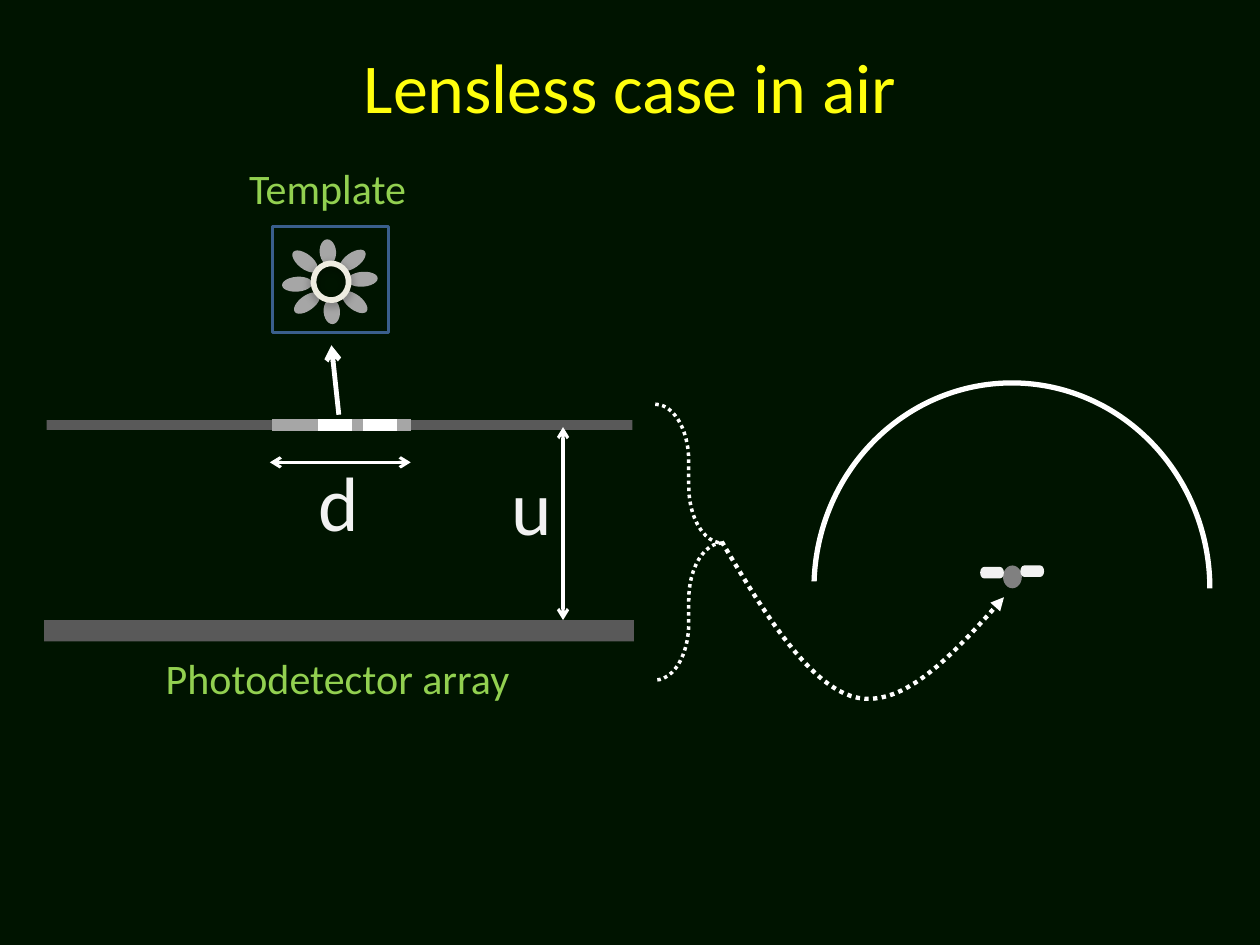
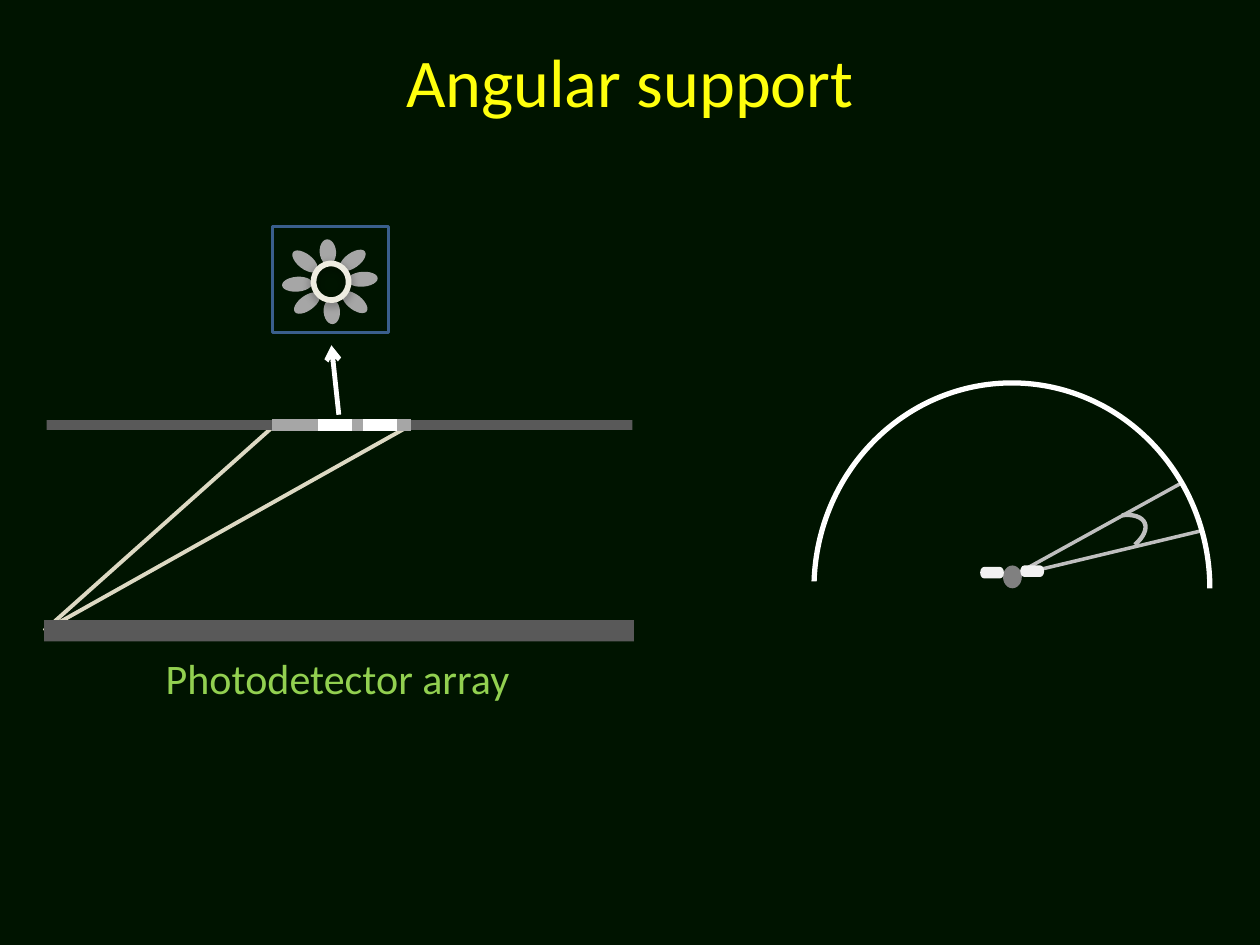
from dataclasses import dataclass
from typing import Any, NamedTuple

from lxml.etree import SubElement
from pptx import Presentation
from pptx.dml.color import RGBColor
from pptx.enum.dml import MSO_LINE
from pptx.enum.shapes import MSO_CONNECTOR, MSO_SHAPE
from pptx.enum.text import MSO_ANCHOR, MSO_AUTO_SIZE, PP_ALIGN
from pptx.oxml.ns import qn
from pptx.util import Cm, Pt

# Shared look
FONT = "Calibri"
NIGHT, YELLOW, GREEN = "001400", "FFFF0D", "92D050"
WHITE, PALE, SILVER = "FFFFFF", "F2F2F2", "BFBFBF"
PETAL_GREY, BODY_GREY, BAR_GREY = "A6A6A6", "808080", "595959"
CREAM, SAND, FRAME_BLUE = "EEECE1", "DDD9C3", "3A5F8C"
SLIDE_WIDTH, SLIDE_HEIGHT = 25.4, 19.05


# All places and sizes are in centimetres
class Point(NamedTuple):
    x: float
    y: float


class Area(NamedTuple):
    left: float
    top: float
    width: float
    height: float


@dataclass(frozen=True)
class Stroke:
    color: str
    width: float
    dash: Any = None
    head: str = ""
    tail: str = ""


@dataclass(frozen=True)
class PetalPair:
    """Two equal petals on opposite sides of the flower's heart."""
    offset: Point
    width: float
    height: float
    rotation: float


FLOWER_HEART = Point(6.65, 5.68)
PETAL_PAIRS = (
    PetalPair(Point(0.04, 0.6), 0.33, 0.51, 355.7),
    PetalPair(Point(0.66, -0.05), 0.61, 0.3, 355.7),
    PetalPair(Point(0.46, -0.43), 0.61, 0.3, 324.1),
    PetalPair(Point(0.5, 0.41), 0.61, 0.3, 218.2),
)
DETECTOR = Area(0.89, 12.5, 11.89, 0.43)
FILM_LEFT = Area(0.94, 8.47, 4.55, 0.2)
FILM_RIGHT = Area(8.28, 8.47, 4.47, 0.2)
DETECTOR_END = Point(0.89, 12.72)
BEE = Point(20.42, 11.61)
DIMENSION = Stroke(WHITE, 1.75, head="arrow", tail="arrow")


# Drawing helpers
def rgb(color: str) -> RGBColor:
    return RGBColor.from_string(color)


def apply_stroke(item: Any, stroke: Stroke) -> None:
    item.line.color.rgb = rgb(stroke.color)
    item.line.width = Pt(stroke.width)
    if stroke.dash is not None:
        item.line.dash_style = stroke.dash
    outline = item._element.spPr.find(qn("a:ln"))
    for tag, kind in (("a:headEnd", stroke.head), ("a:tailEnd", stroke.tail)):
        if kind:
            SubElement(outline, qn(tag), type=kind)


def finish_shape(shape: Any, fill: str = "", stroke: Stroke | None = None) -> None:
    shape.shadow.inherit = False
    if fill:
        shape.fill.solid()
        shape.fill.fore_color.rgb = rgb(fill)
    else:
        shape.fill.background()
    if stroke:
        apply_stroke(shape, stroke)
    else:
        shape.line.fill.background()


def draw_shape(shapes: Any, kind: Any, area: Area, fill: str = "",
               stroke: Stroke | None = None, rotation: float = 0,
               adjustments: tuple[float, ...] = ()) -> Any:
    shape = shapes.add_shape(kind, *(Cm(length) for length in area))
    shape.rotation = rotation
    for index, value in enumerate(adjustments):
        shape.adjustments[index] = value
    finish_shape(shape, fill, stroke)
    return shape


def draw_line(shapes: Any, start: Point, end: Point, stroke: Stroke) -> Any:
    line = shapes.add_connector(MSO_CONNECTOR.STRAIGHT,
                                *(Cm(length) for length in (*start, *end)))
    apply_stroke(line, stroke)
    SubElement(line._element.spPr, qn("a:effectLst"))
    return line


def draw_curve(shapes: Any, points: list[Point], stroke: Stroke, steps: int = 20) -> None:
    """Draw joined cubic curves; neighbours share an end point."""
    vertices = []
    for first in range(0, len(points) - 1, 3):
        controls = points[first:first + 4]
        for step in range(1, steps + 1):
            t = step / steps
            weights = ((1 - t) ** 3, 3 * t * (1 - t) ** 2, 3 * t ** 2 * (1 - t), t ** 3)
            x, y = (sum(w * c for w, c in zip(weights, axis)) for axis in zip(*controls))
            vertices.append((Cm(x), Cm(y)))
    builder = shapes.build_freeform(Cm(points[0].x), Cm(points[0].y))
    builder.add_line_segments(vertices, close=False)
    finish_shape(builder.convert_to_shape(), stroke=stroke)


def add_shadow(shape: Any) -> None:
    effects = shape._element.spPr.find(qn("a:effectLst"))
    shadow = SubElement(effects, qn("a:outerShdw"), blurRad=str(Pt(5)),
                        dist=str(Pt(1.8)), dir="5400000", rotWithShape="0")
    color = SubElement(shadow, qn("a:srgbClr"), val="000000")
    SubElement(color, qn("a:alpha"), val="35000")


def write_text(frame: Any, text: str, *, size: float, color: str,
               align: Any = PP_ALIGN.CENTER, anchor: Any = MSO_ANCHOR.TOP,
               wrap: bool = True) -> None:
    frame.word_wrap = wrap
    frame.auto_size = MSO_AUTO_SIZE.NONE
    frame.vertical_anchor = anchor
    para = frame.paragraphs[0]
    para.alignment = align
    span = para.add_run()
    span.text = text
    span.font.name = FONT
    span.font.size = Pt(size)
    span.font.color.rgb = rgb(color)


def add_label(page: Any, text: str, area: Area, **style: Any) -> None:
    box = page.shapes.add_textbox(*(Cm(length) for length in area))
    write_text(box.text_frame, text, **style)


def add_page(deck: Any, title: str, top: float, **style: Any) -> Any:
    page = deck.slides.add_slide(deck.slide_layouts[5])
    box = page.shapes.title
    box.left, box.top = Cm(0), Cm(top)
    box.width, box.height = Cm(SLIDE_WIDTH), Cm(3.18)
    write_text(box.text_frame, title, color=YELLOW, **style)
    return page


# Parts that both slides show
def draw_sensor(page: Any) -> tuple[Any, Any]:
    """Draw detector, film and aperture; return the detector and right film."""
    detector, left, right = (
        draw_shape(page.shapes, MSO_SHAPE.RECTANGLE, area, BAR_GREY)
        for area in (DETECTOR, FILM_LEFT, FILM_RIGHT))
    for stroke in (Stroke(WHITE, 6.5), Stroke(PETAL_GREY, 6.5, MSO_LINE.DASH_DOT)):
        aperture = draw_line(page.shapes, Point(5.49, 8.57), Point(8.28, 8.57), stroke)
        aperture.begin_connect(left, 3)
        aperture.end_connect(right, 1)
    add_label(page, "Photodetector array", Area(2.59, 13.03, 8.43, 1.27),
              size=24, color=GREEN)
    return detector, right


def draw_template(page: Any) -> None:
    draw_line(page.shapes, Point(6.83, 8.36), Point(6.68, 6.96),
              Stroke(WHITE, 2.75, tail="arrow"))
    flower = page.shapes.add_group_shape().shapes
    for pair in PETAL_PAIRS:
        for side in (1, -1):
            area = Area(FLOWER_HEART.x + side * pair.offset.x - pair.width / 2,
                        FLOWER_HEART.y + side * pair.offset.y - pair.height / 2,
                        pair.width, pair.height)
            draw_shape(flower, MSO_SHAPE.OVAL, area, PETAL_GREY, rotation=pair.rotation)
    ring = draw_shape(flower, MSO_SHAPE.OVAL, Area(6.32, 5.31, 0.71, 0.74),
                      stroke=Stroke(CREAM, 3.25), rotation=355.7)
    add_shadow(ring)
    draw_shape(flower, MSO_SHAPE.RECTANGLE, Area(5.49, 4.57, 2.34, 2.13),
               stroke=Stroke(FRAME_BLUE, 2))


def draw_dome(page: Any) -> None:
    draw_shape(page.shapes, MSO_SHAPE.ARC, Area(16.41, 7.72, 7.98, 8.28),
               stroke=Stroke(WHITE, 3), adjustments=(109.195, 0))
    bee = page.shapes.add_group_shape().shapes
    draw_shape(bee, MSO_SHAPE.FLOWCHART_CONNECTOR, Area(20.22, 11.4, 0.38, 0.46), BODY_GREY)
    for left, top in ((19.76, 11.43), (20.57, 11.4)):
        draw_shape(bee, MSO_SHAPE.FLOWCHART_TERMINATOR, Area(left, top, 0.48, 0.23), PALE)


# Slides
def build_lensless_case(deck: Any) -> None:
    page = add_page(deck, "Lensless case in air", 0.74, size=40)
    draw_sensor(page)

    # Dimensions of the aperture and the gap
    draw_line(page.shapes, Point(5.44, 9.32), Point(8.28, 9.32), DIMENSION)
    draw_line(page.shapes, Point(11.35, 8.61), Point(11.35, 12.5), DIMENSION)
    for letter, left, top in (("d", 6.17, 9.04), ("u", 10.06, 9.12)):
        add_label(page, letter, Area(left, top, 1.35, 2.13), size=44, color=PALE,
                  align=PP_ALIGN.LEFT, wrap=False)

    # Brace and curve that lead to the small sensor under the dome
    draw_shape(page.shapes, MSO_SHAPE.RIGHT_BRACE, Area(13.21, 8.15, 1.35, 5.56),
               stroke=Stroke(WHITE, 2, MSO_LINE.ROUND_DOT), adjustments=(0.853, 0.503))
    draw_curve(page.shapes,
               [Point(14.55, 10.92), Point(15.44, 12.42), Point(16.36, 13.89),
                Point(17.3, 14.07), Point(18.26, 14.25), Point(19.25, 13.16),
                Point(20.24, 12.04)],
               Stroke(WHITE, 2.5, MSO_LINE.ROUND_DOT, tail="triangle"))
    draw_dome(page)
    add_label(page, "Template", Area(4.75, 3.15, 3.71, 1.27), size=24, color=GREEN,
              wrap=False)
    draw_template(page)


def build_angular_support(deck: Any) -> None:
    page = add_page(deck, "Angular support", 0.03, size=39, anchor=MSO_ANCHOR.MIDDLE)
    draw_template(page)

    # Rays from the aperture's edges to the detector's end, behind the bars
    rays = [draw_line(page.shapes, start, DETECTOR_END, Stroke(SAND, 2.25))
            for start in (Point(5.64, 8.48), Point(8.28, 8.57))]
    detector, film_right = draw_sensor(page)
    for ray in rays:
        ray.end_connect(detector, 1)
    rays[1].begin_connect(film_right, 1)

    # Viewing angle
    angle = page.shapes.add_group_shape().shapes
    draw_shape(angle, MSO_SHAPE.ARC, Area(21.64, 10.46, 1.5, 0.76),
               stroke=Stroke(SILVER, 2.5), rotation=336.6, adjustments=(191.997, 23.796))
    for edge in (Point(24.26, 10.69), Point(23.83, 9.73)):
        draw_line(angle, edge, BEE, Stroke(SILVER, 2))
    draw_dome(page)


def main() -> None:
    deck = Presentation()
    deck.slide_width, deck.slide_height = Cm(SLIDE_WIDTH), Cm(SLIDE_HEIGHT)
    backdrop = deck.slide_master.background.fill
    backdrop.solid()
    backdrop.fore_color.rgb = rgb(NIGHT)
    build_lensless_case(deck)
    build_angular_support(deck)
    deck.save("out.pptx")


if __name__ == "__main__":
    main()
